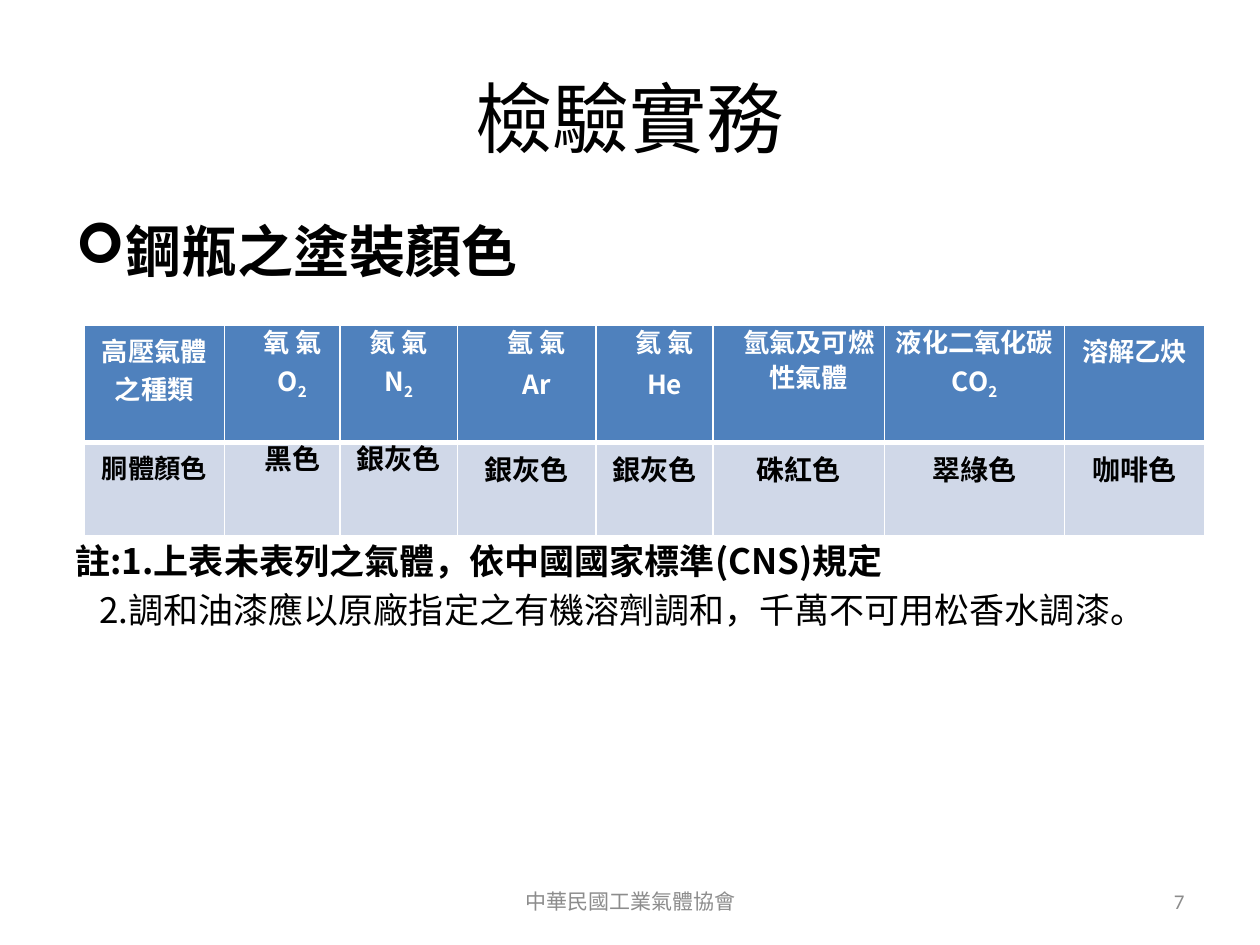
import pptx
import pptx.dml.color
import pptx.enum.text
import pptx.oxml
import pptx.oxml.ns
import pptx.util

Inches, Pt = pptx.util.Inches, pptx.util.Pt
ALIGN, ANCHOR = pptx.enum.text.PP_ALIGN, pptx.enum.text.MSO_ANCHOR

WIDTH, HEIGHT = 10, 7.5
CJK = "Noto Sans CJK SC"
BLACK, WHITE, GREY = "000000", "FFFFFF", "8C8C8C"
HEADER_FILL, BODY_FILL = "4F81BD", "D0D8E8"

COLUMN_WIDTHS = [1.11, 0.92, 0.93, 1.1, 0.93, 1.36, 1.43, 1.11]
ROW_HEIGHTS = [0.93, 0.74]
# Each cell is a list of lines; a pair is a symbol and its subscript.
HEADERS = [
    ["高壓氣體之種類"], ["氧 氣", ("O", "2")], ["氮 氣", ("N", "2")],
    ["氬 氣", "Ar"], ["氦 氣", "He"], ["氫氣及可燃性氣體"],
    ["液化二氧化碳", ("CO", "2")], ["溶解乙炔"],
]
COLOURS = ["胴體顏色", "黑色", "銀灰色", "銀灰色", "銀灰色", "硃紅色", "翠綠色", "咖啡色"]
TIGHT_CELLS = {(0, column) for column in range(1, 7)} | {(1, 1), (1, 2)}
INDENTED_CELLS = {(0, 1), (0, 3), (0, 4), (0, 5), (1, 1)}


def rgb(colour):
    return pptx.dml.color.RGBColor.from_string(colour)


def add_run(paragraph, text, size, colour=BLACK, bold=False, font=CJK, subscript=False):
    run = paragraph.add_run()
    run.text = text
    run.font.size = Pt(size)
    run.font.bold = bold
    run.font.color.rgb = rgb(colour)
    run.font.name = font
    properties = run.font._element
    east_asian = pptx.oxml.parse_xml(
        f'<a:ea {pptx.oxml.ns.nsdecls("a")} typeface="{CJK}"/>')
    properties.find(pptx.oxml.ns.qn("a:latin")).addnext(east_asian)
    if subscript:
        properties.set("baseline", "-25000")


def set_indent(paragraph, left, first=0):
    properties = paragraph._p.get_or_add_pPr()
    properties.set("marL", str(Inches(left)))
    properties.set("indent", str(Inches(first)))


def add_text_box(slide, left, top, width, height, anchor=ANCHOR.TOP):
    box = slide.shapes.add_textbox(*map(Inches, (left, top, width, height)))
    frame = box.text_frame
    frame.word_wrap = True
    frame.vertical_anchor = anchor
    return frame


def add_title(slide, text):
    title = slide.shapes.title
    title.left, title.top = Inches(0.05 * WIDTH), Inches(0.04 * HEIGHT)
    title.width, title.height = Inches(0.9 * WIDTH), Inches(1.25)
    title.text_frame.vertical_anchor = ANCHOR.MIDDLE
    paragraph = title.text_frame.paragraphs[0]
    paragraph.alignment = ALIGN.CENTER
    add_run(paragraph, text, 44)


def add_heading(slide, text):
    frame = add_text_box(slide, 0.05 * WIDTH, 1.67, 0.9 * WIDTH, 0.75)
    paragraph = frame.paragraphs[0]
    set_indent(paragraph, 0.38, -0.38)
    for xml in ('<a:buFont {} typeface="Wingdings"/>', '<a:buChar {} char="➢"/>'):
        paragraph._p.get_or_add_pPr().append(
            pptx.oxml.parse_xml(xml.format(pptx.oxml.ns.nsdecls("a"))))
    add_run(paragraph, text, 32, bold=True)


def add_notes_text(slide, notes):
    """Add the remarks below the table, as (text, left indent, bold)."""
    frame = add_text_box(slide, 0.05 * WIDTH, 4.18, 0.9 * WIDTH, 0.9)
    for index, (text, left, bold) in enumerate(notes):
        paragraph = frame.add_paragraph() if index else frame.paragraphs[0]
        set_indent(paragraph, left)
        paragraph.line_spacing = Pt(28)
        add_run(paragraph, text, 20, bold=bold)


def set_borders(cell, row):
    """White rules, with a heavy one between the header and the body."""
    widths = {"L": 1, "R": 1, "T": 3 if row else 1, "B": 1 if row else 3}
    properties = cell._tc.get_or_add_tcPr()
    for position, (side, width) in enumerate(widths.items()):
        properties.insert(position, pptx.oxml.parse_xml(
            f'<a:ln{side} {pptx.oxml.ns.nsdecls("a")} w="{Pt(width)}">'
            f'<a:solidFill><a:srgbClr val="{WHITE}"/></a:solidFill></a:ln{side}>'))


def fill_cell(cell, row, column, lines):
    tight = (row, column) in TIGHT_CELLS
    if tight:
        cell.margin_left = cell.margin_right = Inches(0.02)
        cell.margin_top = cell.margin_bottom = 0
    cell.fill.solid()
    cell.fill.fore_color.rgb = rgb(BODY_FILL if row else HEADER_FILL)
    set_borders(cell, row)
    size = 16 if row and column else 15
    for index, line in enumerate(lines):
        frame = cell.text_frame
        paragraph = frame.add_paragraph() if index else frame.paragraphs[0]
        paragraph.alignment = ALIGN.CENTER
        if (row, column) in INDENTED_CELLS:
            set_indent(paragraph, 0.16)
        if tight:
            paragraph.line_spacing = Pt(20)
            paragraph.space_after = Pt(4)
        parts = (line,) if isinstance(line, str) else line
        for part_index, part in enumerate(parts):
            add_run(paragraph, part, size, BLACK if row else WHITE, bold=True,
                    subscript=part_index > 0)


def add_colour_table(slide):
    rows = [HEADERS, [[name] for name in COLOURS]]
    table = slide.shapes.add_table(
        len(rows), len(HEADERS), Inches(0.67), Inches(2.58),
        Inches(sum(COLUMN_WIDTHS)), Inches(sum(ROW_HEIGHTS))).table
    for column, width in zip(table.columns, COLUMN_WIDTHS):
        column.width = Inches(width)
    for row, height in zip(table.rows, ROW_HEIGHTS):
        row.height = Inches(height)
    for row, cells in enumerate(rows):
        for column, lines in enumerate(cells):
            fill_cell(table.cell(row, column), row, column, lines)


def add_footer(slide, text, left, width, alignment):
    frame = add_text_box(slide, left, 6.95, width, 0.4, ANCHOR.MIDDLE)
    frame.paragraphs[0].alignment = alignment
    add_run(frame.paragraphs[0], text, 12, GREY, font="Calibri")


def main():
    presentation = pptx.Presentation()
    presentation.slide_width, presentation.slide_height = Inches(WIDTH), Inches(HEIGHT)
    slide = presentation.slides.add_slide(presentation.slide_layouts[5])
    add_title(slide, "檢驗實務")
    add_heading(slide, "鋼瓶之塗裝顏色")
    add_notes_text(slide, [
        ("註:1.上表未表列之氣體，依中國國家標準(CNS)規定", 0, True),
        ("2.調和油漆應以原廠指定之有機溶劑調和，千萬不可用松香水調漆。", 0.19, False),
    ])
    add_footer(slide, "中華民國工業氣體協會", 3.42, 3.17, ALIGN.CENTER)
    add_footer(slide, "7", 7.17, 2.33, ALIGN.RIGHT)
    add_colour_table(slide)
    presentation.save("out.pptx")


if __name__ == "__main__":
    main()
